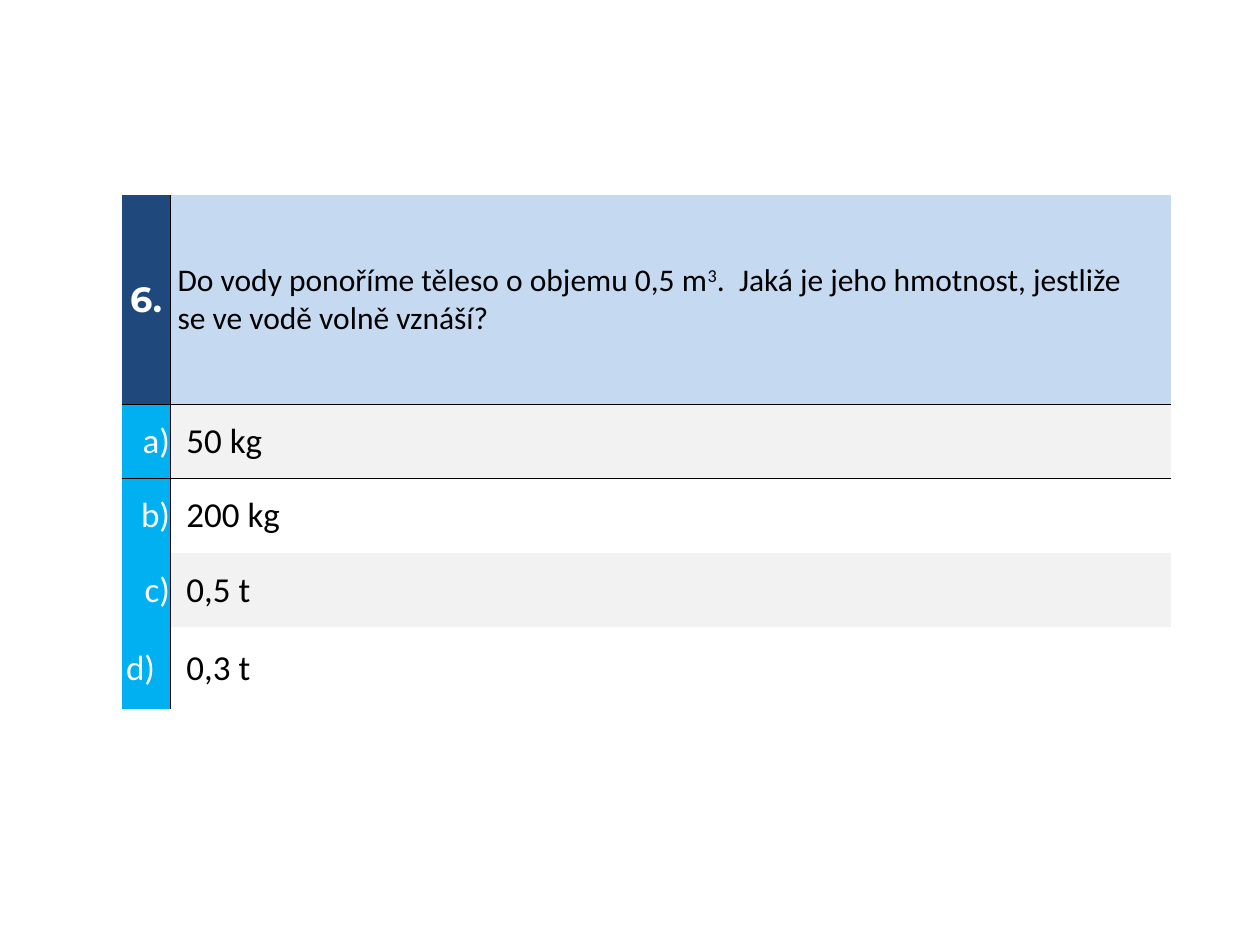
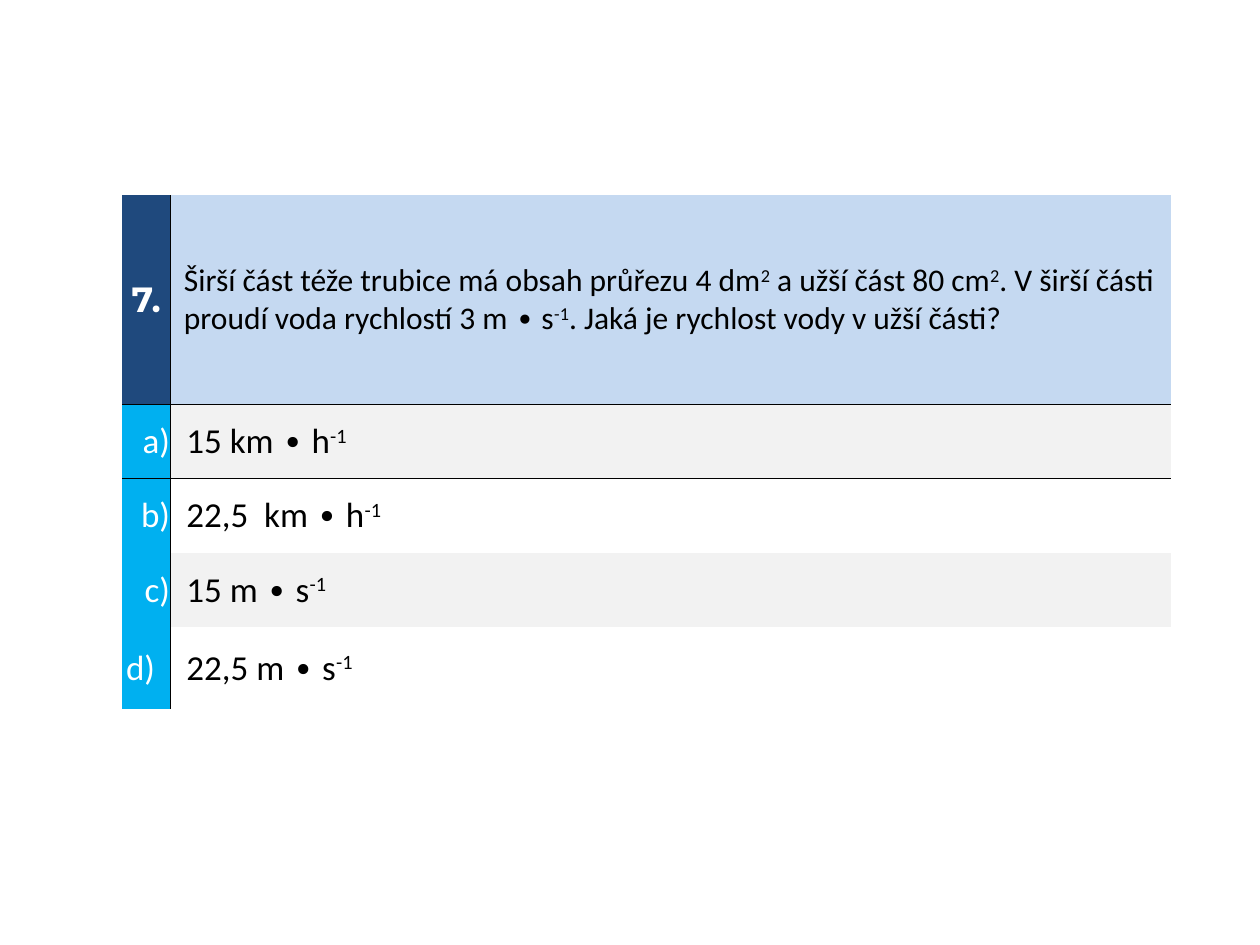
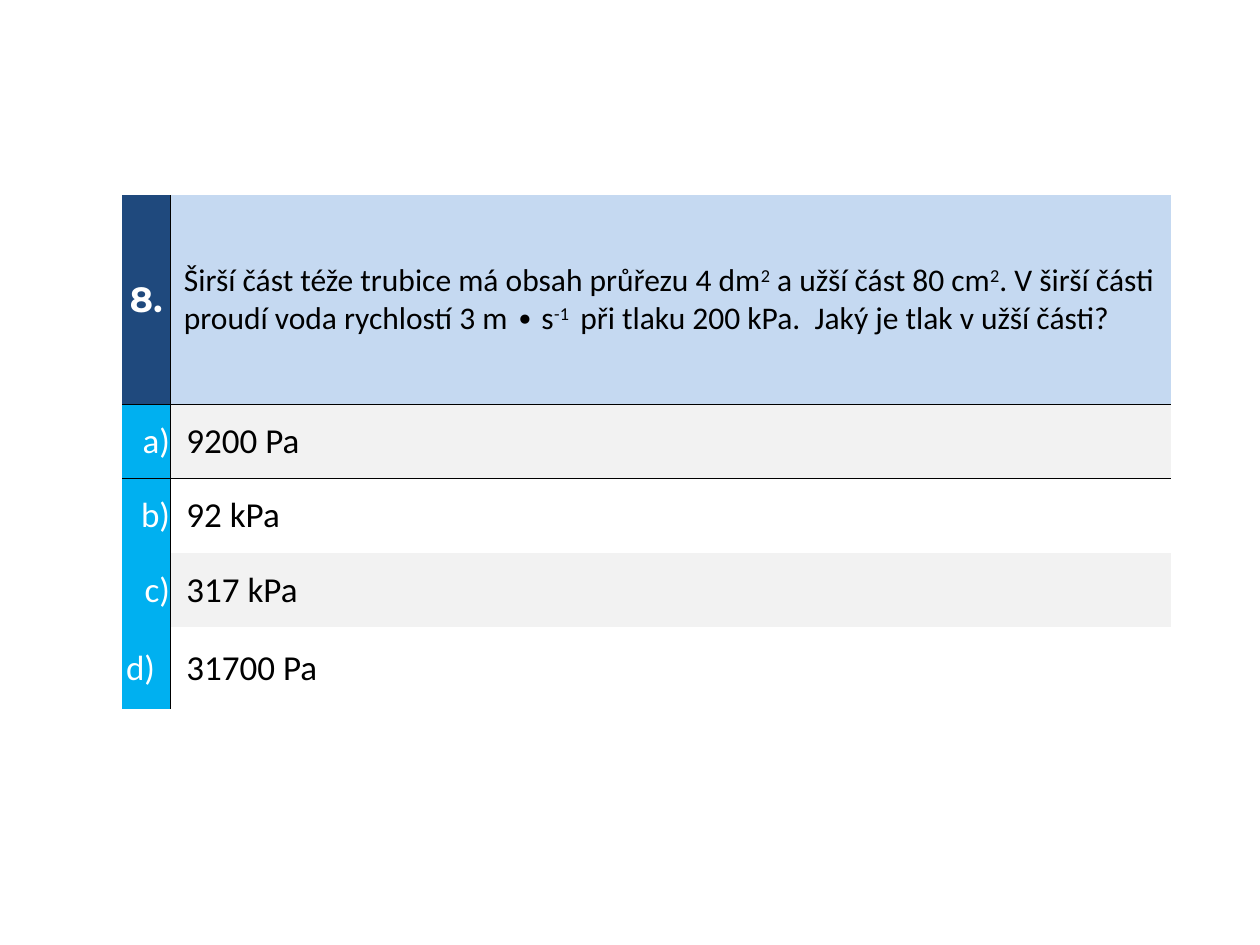
from lxml import etree
from pptx import Presentation
from pptx.dml.color import RGBColor
from pptx.enum.text import MSO_ANCHOR, PP_ALIGN
from pptx.oxml.ns import qn
from pptx.util import Inches, Pt

# Text between carets is superscript; a newline is a line break.
# Each entry: number, question, question indent in inches, answers.
QUESTIONS = [
    ("6.",
     "Do vody ponoříme těleso o objemu 0,5 m^3^.  Jaká je jeho hmotnost, jestliže\n"
     "se ve vodě volně vznáší?",
     0.06, ["50 kg", "200 kg", "0,5 t", "0,3 t"]),
    ("7.",
     "Širší část téže trubice má obsah průřezu 4 dm^2^ a užší část 80 cm^2^. V širší části\n"
     "proudí voda rychlostí 3 m ∙ s^-1^. Jaká je rychlost vody v užší části?",
     0.11, ["15 km ∙ h^-1^", "22,5  km ∙ h^-1^", "15 m ∙ s^-1^", "22,5 m ∙ s^-1^"]),
    ("8.",
     "Širší část téže trubice má obsah průřezu 4 dm^2^ a užší část 80 cm^2^. V širší části\n"
     "proudí voda rychlostí 3 m ∙ s^-1 ^ při tlaku 200 kPa.  Jaký je tlak v užší části?",
     0.11, ["9200 Pa", "92 kPa", "317 kPa", "31700 Pa"]),
]
LETTERS = ["a)", "b)", "c)", "d)"]

NAVY = RGBColor(0x1F, 0x49, 0x7D)
PALE_BLUE = RGBColor(0xC5, 0xD9, 0xF1)
SKY = RGBColor(0x00, 0xB0, 0xF0)
GREY = RGBColor(0xF2, 0xF2, 0xF2)
WHITE = RGBColor(0xFF, 0xFF, 0xFF)
BLACK = RGBColor(0, 0, 0)

LEFT, TOP = 0.97, 1.55
COLUMNS = [0.38, 7.94]
ROWS = [1.66, 0.59, 0.59, 0.59, 0.65]
ANSWER_INDENT = 0.13
LAST_LETTER_INSET = 0.12
NO_STYLE = "{2D5ABB26-0587-4C30-8999-92F81FD0307C}"


def add_borders(cell, sides):
    """Draw thin black lines on the given sides, in the order L, R, T, B."""
    tcPr = cell._tc.get_or_add_tcPr()
    for side in sides:
        ln = etree.SubElement(tcPr, qn(f"a:ln{side}"), w=str(Pt(0.5)))
        fill = etree.SubElement(ln, qn("a:solidFill"))
        etree.SubElement(fill, qn("a:srgbClr"), val=str(BLACK))


def add_marked_text(p, text):
    for i, line in enumerate(text.split("\n")):
        if i:
            p.add_line_break()
        for j, part in enumerate(line.split("^")):
            if part:
                r = p.add_run()
                r.text = part
                if j % 2:
                    r.font._element.set("baseline", "30000")


def fill_cell(cell, text, fill, sides, size=20, color=BLACK, font="Calibri",
              bold=False, align=PP_ALIGN.LEFT, indent=0, inset=0):
    add_borders(cell, sides)
    if fill is None:
        cell.fill.background()
    else:
        cell.fill.solid()
        cell.fill.fore_color.rgb = fill
    cell.vertical_anchor = MSO_ANCHOR.MIDDLE
    cell.margin_left, cell.margin_right = Inches(indent), Inches(inset)
    cell.margin_top = cell.margin_bottom = 0
    p = cell.text_frame.paragraphs[0]
    p.alignment = align
    add_marked_text(p, text)
    for r in p.runs:
        r.font.name, r.font.size, r.font.bold = font, Pt(size), bold
        r.font.color.rgb = color


def add_question(prs, number, question, indent, answers):
    s = prs.slides.add_slide(prs.slide_layouts[6])
    table = s.shapes.add_table(
        len(ROWS), len(COLUMNS), Inches(LEFT), Inches(TOP),
        Inches(sum(COLUMNS)), Inches(sum(ROWS))).table
    table._tbl.tblPr.find(qn("a:tableStyleId")).text = NO_STYLE
    table.first_row = table.horz_banding = False
    for column, width in zip(table.columns, COLUMNS):
        column.width = Inches(width)
    for row, height in zip(table.rows, ROWS):
        row.height = Inches(height)

    fill_cell(table.cell(0, 0), number, NAVY, "RB", color=WHITE,
              font="Montserrat", bold=True, align=PP_ALIGN.CENTER)
    fill_cell(table.cell(0, 1), question, PALE_BLUE, "LB", size=18, indent=indent)
    for i, (letter, answer) in enumerate(zip(LETTERS, answers), start=1):
        top = "T" if i == 1 else ""
        fill_cell(table.cell(i, 0), letter, SKY, "R" + top, color=WHITE,
                  align=PP_ALIGN.RIGHT,
                  inset=LAST_LETTER_INSET if i == len(LETTERS) else 0)
        fill_cell(table.cell(i, 1), answer, GREY if i % 2 else None, "L" + top,
                  indent=ANSWER_INDENT)


def main():
    prs = Presentation()
    prs.slide_width, prs.slide_height = Inches(10), Inches(7.5)
    for entry in QUESTIONS:
        add_question(prs, *entry)
    prs.save("out.pptx")


if __name__ == "__main__":
    main()
